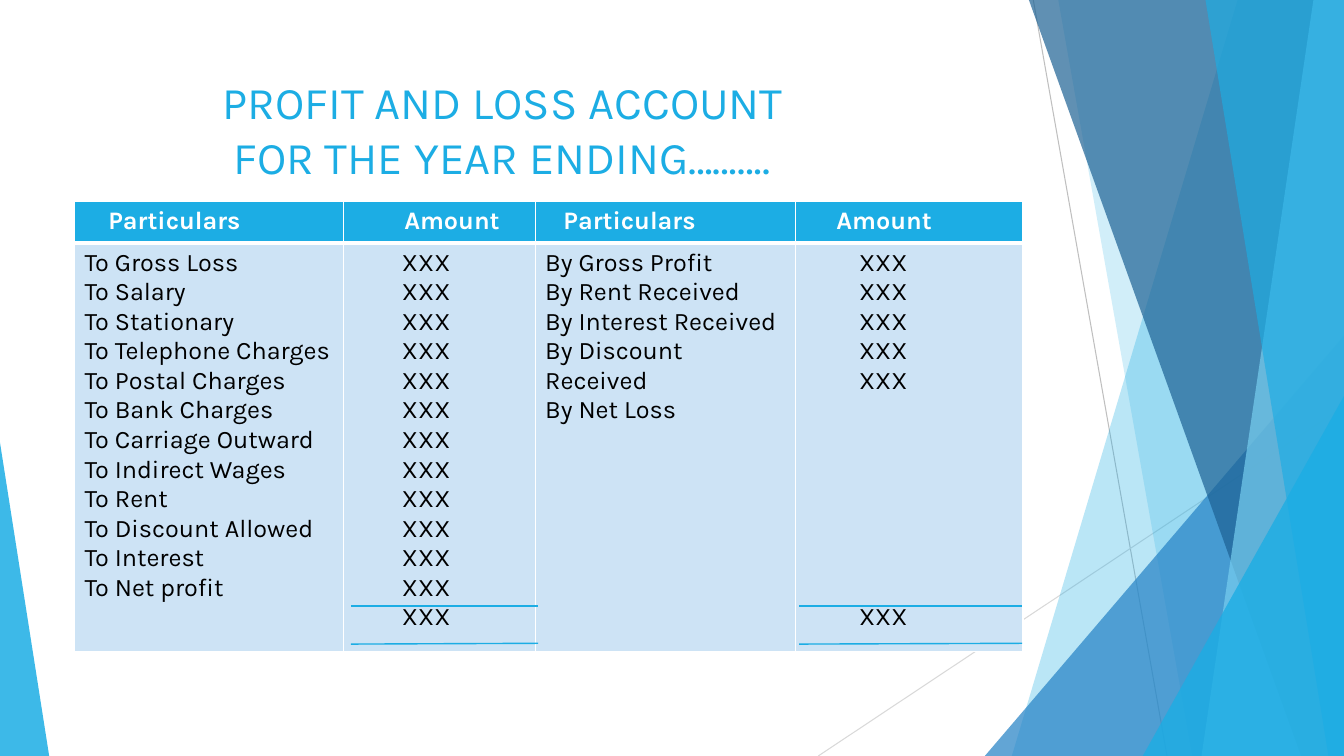
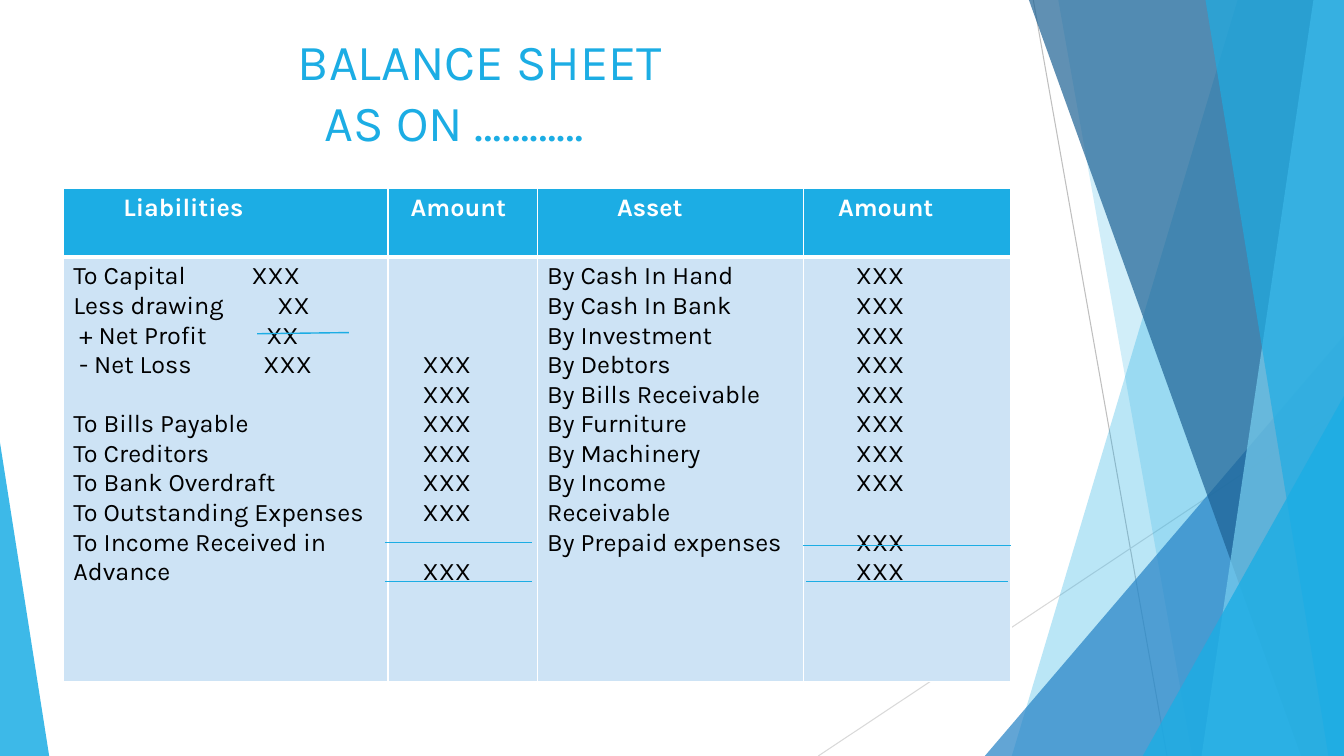
import dataclasses

import pptx
import pptx.dml.color
import pptx.enum.shapes
import pptx.enum.text
import pptx.oxml.ns
import pptx.oxml.xmlchemy
import pptx.util

Cm = pptx.util.Cm
Pt = pptx.util.Pt
RGBColor = pptx.dml.color.RGBColor
OxmlElement = pptx.oxml.xmlchemy.OxmlElement

SKY = RGBColor(0x1C, 0xAD, 0xE4)
BLUE = RGBColor(0x26, 0x83, 0xC6)
NAVY = RGBColor(0x1D, 0x62, 0x94)
PALE_SKY = RGBColor(0x77, 0xCE, 0xEF)
CELL_BLUE = RGBColor(0xCD, 0xE3, 0xF5)
GREY = RGBColor(0xBF, 0xBF, 0xBF)
LIGHT_GREY = RGBColor(0xD9, 0xD9, 0xD9)
WHITE = RGBColor(0xFF, 0xFF, 0xFF)
BLACK = RGBColor(0, 0, 0)

FONT = "Karla"
WIDTH, HEIGHT = 33.87, 19.05
LINE_PITCH = 21.1
CELL_PAD = 0.25


@dataclasses.dataclass
class Entry:
    """One ledger line, with blank lines above it and an optional tab stop in cm."""
    text: str
    gap: int = 0
    tab: float = 0


@dataclasses.dataclass
class Column:
    """A ledger column with its width and text insets in cm."""
    heading: str
    width: float
    heading_inset: float
    entries: list
    inset: float = CELL_PAD


def entries(*texts):
    """Turn plain texts into ledger lines."""
    return [Entry(text) for text in texts]


def amounts(count):
    """Return a run of placeholder amounts."""
    return entries(*["XXX"] * count)


class Deck:
    """Holds the style, the presentation and the current slide."""

    def __init__(self):
        """Open an empty wide presentation."""
        self.presentation = pptx.Presentation()
        self.presentation.slide_width = Cm(WIDTH)
        self.presentation.slide_height = Cm(HEIGHT)
        self.slide = None

    def new_slide(self):
        """Add a title-only slide with the shared decoration."""
        layout = self.presentation.slide_layouts[5]
        self.slide = self.presentation.slides.add_slide(layout)
        self.line(26.04, 0, 29.41, HEIGHT, GREY, 0.75)
        self.line(WIDTH, 10.24, 20.62, HEIGHT, LIGHT_GREY, 0.75)
        self.band(31.19, 25.5, SKY, 30)
        self.band(26.67, 30.05, SKY, 20)
        self.triangle(24.82, 8.46, WIDTH - 24.82, 1, BLUE, 72)
        self.band(25.93, 32.79, NAVY, 70)
        self.band(33.1, 30.28, PALE_SKY, 70)
        self.band(30.38, 33.48, SKY, 65)
        self.triangle(28.8, 9.98, WIDTH - 28.8, 1, SKY, 80)
        self.triangle(0, 11.15, 1.24, 0, SKY, 85)

    def paint(self, shape, color, opacity):
        """Give a shape a translucent fill without line or shadow."""
        shape.shadow.inherit = False
        shape.line.fill.background()
        shape.fill.solid()
        shape.fill.fore_color.rgb = color
        tint = shape._element.spPr.find(".//" + pptx.oxml.ns.qn("a:srgbClr"))
        alpha = OxmlElement("a:alpha")
        alpha.set("val", str(opacity * 1000))
        tint.append(alpha)

    def band(self, top, bottom, color, opacity):
        """Draw a full-height band from a slanted left side to the right edge."""
        outline = self.slide.shapes.build_freeform(Cm(top), 0)
        corners = [(WIDTH, 0), (WIDTH, HEIGHT), (bottom, HEIGHT)]
        outline.add_line_segments([(Cm(x), Cm(y)) for x, y in corners])
        self.paint(outline.convert_to_shape(), color, opacity)

    def triangle(self, left, top, width, apex, color, opacity):
        """Draw a right triangle standing on the bottom edge."""
        kind = pptx.enum.shapes.MSO_SHAPE.ISOSCELES_TRIANGLE
        wedge = self.slide.shapes.add_shape(
            kind, Cm(left), Cm(top), Cm(width), Cm(HEIGHT - top))
        wedge.adjustments[0] = apex
        self.paint(wedge, color, opacity)

    def line(self, x1, y1, x2, y2, color=SKY, weight=1):
        """Draw a straight line without shadow."""
        stroke = self.slide.shapes.add_connector(
            pptx.enum.shapes.MSO_CONNECTOR.STRAIGHT, Cm(x1), Cm(y1), Cm(x2), Cm(y2))
        stroke.line.color.rgb = color
        stroke.line.width = Pt(weight)
        stroke._element.spPr.append(OxmlElement("a:effectLst"))

    def run(self, paragraph, text, size, color, bold=False):
        """Add one styled run."""
        run = paragraph.add_run()
        run.text = text
        run.font.name = FONT
        run.font.size = Pt(size)
        run.font.bold = bold
        run.font.color.rgb = color

    def title(self, left, top, height, size, lines):
        """Place the title, each line with its own indent."""
        title = self.slide.shapes.title
        title.left, title.top = Cm(left), Cm(top)
        title.width, title.height = Cm(23.88), Cm(height)
        frame = title.text_frame
        frame.word_wrap = True
        frame.auto_size = pptx.enum.text.MSO_AUTO_SIZE.NONE
        frame.vertical_anchor = pptx.enum.text.MSO_ANCHOR.TOP
        for number, (text, indent) in enumerate(lines):
            paragraph = frame.add_paragraph() if number else frame.paragraphs[0]
            paragraph.alignment = pptx.enum.text.PP_ALIGN.LEFT
            paragraph._p.get_or_add_pPr().set("marL", str(Cm(indent)))
            self.run(paragraph, text, size, SKY)

    def borders(self, cell, top, bottom):
        """Give a cell white borders."""
        weights = {"a:lnL": 1, "a:lnR": 1, "a:lnT": top, "a:lnB": bottom}
        for tag, weight in weights.items():
            edge = OxmlElement(tag)
            edge.set("w", str(Pt(weight)))
            fill = OxmlElement("a:solidFill")
            color = OxmlElement("a:srgbClr")
            color.set("val", str(WHITE))
            fill.append(color)
            edge.append(fill)
            cell._tc.get_or_add_tcPr().append(edge)

    def cell(self, cell, lines, inset, fill, color, bold):
        """Fill one table cell with ledger lines."""
        cell.margin_left = Cm(inset)
        cell.margin_top = Pt(3.6 + lines[0].gap * LINE_PITCH)
        cell.fill.solid()
        cell.fill.fore_color.rgb = fill
        for number, entry in enumerate(lines):
            frame = cell.text_frame
            paragraph = frame.add_paragraph() if number else frame.paragraphs[0]
            if number and entry.gap:
                paragraph.space_before = Pt(entry.gap * LINE_PITCH)
            if entry.tab:
                stops = OxmlElement("a:tabLst")
                stop = OxmlElement("a:tab")
                stop.set("pos", str(Cm(entry.tab)))
                stop.set("algn", "l")
                stops.append(stop)
                paragraph._p.get_or_add_pPr().append(stops)
            self.run(paragraph, entry.text, 18, color, bold)

    def ledger(self, left, top, heights, columns):
        """Draw a table with a heading row and one tall row of entries."""
        width = sum(column.width for column in columns)
        table = self.slide.shapes.add_table(
            2, len(columns), Cm(left), Cm(top), Cm(width), Cm(sum(heights))).table
        for row, height in zip(table.rows, heights):
            row.height = Cm(height)
        for index, column in enumerate(columns):
            table.columns[index].width = Cm(column.width)
            heading, body = table.cell(0, index), table.cell(1, index)
            self.borders(heading, 1, 3)
            self.borders(body, 3, 1)
            self.cell(heading, entries(column.heading), column.heading_inset,
                      SKY, WHITE, True)
            self.cell(body, column.entries, column.inset, CELL_BLUE, BLACK, False)


def profit_and_loss(deck):
    """Build the profit and loss account."""
    deck.new_slide()
    deck.title(1.88, 1.75, 2.64, 32.4, [
        ("PROFIT AND LOSS ACCOUNT", 3.48), ("FOR THE YEAR ENDING……….", 3.75)])
    expenses = entries(
        "To Gross Loss", "To Salary", "To Stationary", "To Telephone Charges",
        "To Postal Charges", "To Bank Charges", "To Carriage Outward",
        "To Indirect Wages", "To Rent", "To Discount Allowed", "To Interest",
        "To Net profit")
    income = entries(
        "By Gross Profit", "By Rent Received", "By Interest Received",
        "By Discount Received", "By Net Loss")
    deck.ledger(1.88, 5.08, (1.04, 10.29), [
        Column("Particulars", 6.78, 0.85, expenses),
        Column("Amount", 4.83, 1.53, amounts(13), 1.47),
        Column("Particulars", 6.55, 0.71, income),
        Column("Amount", 5.74, 1.04, amounts(5) + [Entry("XXX", gap=7)], 1.61)])
    for left, right in ((8.84, 13.56), (20.14, 25.76)):
        deck.line(left, 15.27, right, 15.27)
        deck.line(left, 16.23, right, 16.21)


def balance_sheet(deck):
    """Build the balance sheet."""
    deck.new_slide()
    deck.title(1.9, 0.64, 3.66, 36, [
        ("BALANCE SHEET", 5.35), ("AS ON …………", 6.03)])
    liabilities = [
        Entry("To Capital\tXXX", tab=4.49),
        Entry("Less drawing\tXX", tab=5.14),
        Entry(" + Net Profit\tXX", tab=4.86),
        Entry(" - Net Loss\tXXX", tab=4.79),
        Entry("To Bills Payable", gap=1),
        *entries("To Creditors", "To Bank Overdraft", "To Outstanding Expenses",
                 "To Income Received in Advance")]
    assets = entries(
        "By Cash In Hand", "By Cash In Bank", "By Investment", "By Debtors",
        "By Bills Receivable", "By Furniture", "By Machinery", "By Income",
        "Receivable", "By Prepaid expenses")
    owed = [Entry("XXX", gap=3), *amounts(5), Entry("XXX", gap=1)]
    owned = [*amounts(8), Entry("XXX", gap=1), Entry("XXX")]
    deck.ledger(1.6, 4.75, (1.72, 10.7), [
        Column("Liabilities", 8.18, 1.51, liabilities),
        Column("Amount", 3.76, 0.57, owed, 0.87),
        Column("Asset", 6.71, 2.01, assets),
        Column("Amount", 5.23, 0.87, owned, 1.32)])
    deck.line(9.7, 13.67, 13.41, 13.67)
    deck.line(9.7, 14.66, 13.41, 14.66)
    deck.line(20.24, 13.74, 25.48, 13.74)
    deck.line(20.32, 14.66, 25.4, 14.66)
    deck.line(6.48, 8.41, 8.79, 8.38)


def main():
    """Build and save the deck."""
    deck = Deck()
    profit_and_loss(deck)
    balance_sheet(deck)
    deck.presentation.save("out.pptx")


if __name__ == "__main__":
    main()
